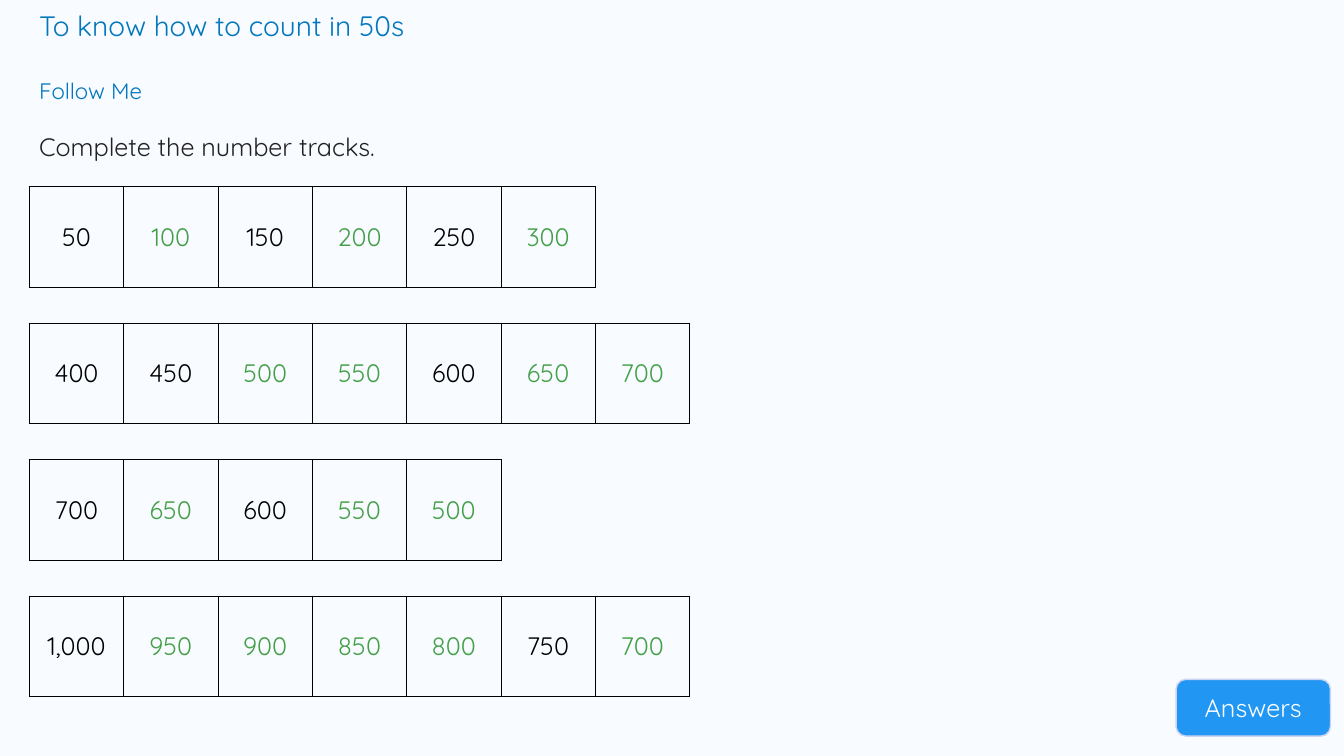
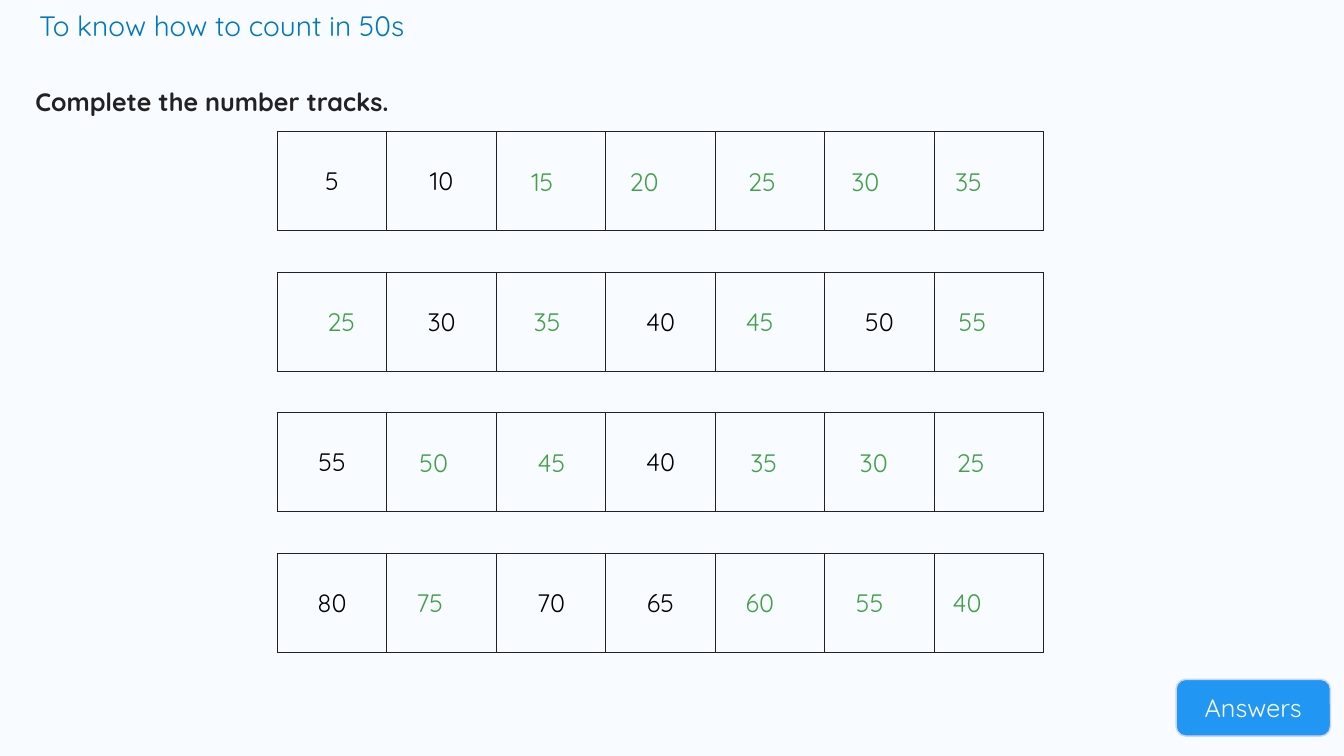
from lxml.etree import SubElement
from pptx import Presentation
from pptx.dml.color import RGBColor
from pptx.enum.shapes import MSO_SHAPE
from pptx.enum.text import MSO_ANCHOR, PP_ALIGN
from pptx.oxml import parse_xml
from pptx.oxml.ns import nsdecls, qn
from pptx.util import Cm, Pt

COLOURS = {
    "background": "F8FBFF",
    "heading": "0277BD",
    "body": "222222",
    "number": "000000",
    "answer": "43A047",
    "button": "2196F3",
    "button_edge": "CCD4F4",
    "button_text": "FFFFFF",
}
INSET = 0.25


class Worksheet:
    """Holds the worksheet style and adds elements to the current page."""

    font_name = "Quicksand"

    def __init__(self):
        self.deck = Presentation()
        self.deck.slide_width, self.deck.slide_height = Cm(33.87), Cm(19.05)
        fill = self.deck.slide_master.background.fill
        fill.solid()
        fill.fore_color.rgb = self.colour("background")
        self.page = None

    def colour(self, name):
        return RGBColor.from_string(COLOURS[name])

    def style(self, para, colour, size=18, bold=False):
        para.font.name = self.font_name
        para.font.size = Pt(size)
        para.font.bold = bold
        para.font.color.rgb = self.colour(colour)

    def start_page(self, title):
        self.page = self.deck.slides.add_slide(self.deck.slide_layouts[6])
        self.text(title, 0.74, 0.1, 31.34, 1.12, "heading", 20)

    def text_box(self, left, top, width, height):
        box = self.page.shapes.add_textbox(Cm(left), Cm(top), Cm(width), Cm(height))
        box.text_frame.word_wrap = True
        return box.text_frame

    def text(self, words, left, top, width, height, colour, size=18, bold=False, spacing=None):
        para = self.text_box(left, top, width, height).paragraphs[0]
        para.text = words
        para.line_spacing = spacing
        self.style(para, colour, size, bold)

    def button(self, label):
        button = self.page.shapes.add_shape(
            MSO_SHAPE.ROUNDED_RECTANGLE, Cm(29.64), Cm(17.12), Cm(3.89), Cm(1.43))
        button.adjustments[0] = 0.17
        button.shadow.inherit = False
        button.fill.solid()
        button.fill.fore_color.rgb = self.colour("button")
        button.line.color.rgb = self.colour("button_edge")
        button.line.width = Pt(1)
        button.text_frame.vertical_anchor = MSO_ANCHOR.MIDDLE
        para = button.text_frame.paragraphs[0]
        para.text = label
        para.alignment = PP_ALIGN.CENTER
        self.style(para, "button_text")

    def border(self, cell, edge):
        line = f'<a:solidFill><a:srgbClr val="{COLOURS[edge]}"/></a:solidFill>' if edge else "<a:noFill/>"
        properties = cell._tc.get_or_add_tcPr()
        for position, side in enumerate(("lnL", "lnR", "lnT", "lnB")):
            properties.insert(position, parse_xml(
                f'<a:{side} {nsdecls("a")} w="{Pt(0.75)}">{line}</a:{side}>'))

    def track(self, numbers, left, top, cell_width, height, edge=None, colour="number"):
        table = self.page.shapes.add_table(
            1, len(numbers), Cm(left), Cm(top),
            Cm(cell_width * len(numbers)), Cm(height)).table
        table.first_row = table.horz_banding = False
        for column, number in enumerate(numbers):
            table.columns[column].width = Cm(cell_width)
            cell = table.cell(0, column)
            cell.fill.background()
            self.border(cell, edge)
            cell.vertical_anchor = MSO_ANCHOR.MIDDLE
            cell.margin_left = cell.margin_right = Cm(INSET)
            cell.margin_top = cell.margin_bottom = Cm(INSET)
            para = cell.text_frame.paragraphs[0]
            para.text = f"{number:,}" if number else ""
            para.alignment = PP_ALIGN.CENTER
            self.style(para, colour)

    def answer_line(self, centres, left, top, width):
        frame = self.text_box(left, top, width, 1.27)
        frame.margin_left = frame.margin_right = Cm(INSET)
        frame.margin_top = frame.margin_bottom = Cm(INSET)
        para = frame.paragraphs[0]
        para.text = "".join(f"\t{number}" for number, _ in centres)
        stops = SubElement(para._p.get_or_add_pPr(), qn("a:tabLst"))
        for _, centre in centres:
            SubElement(stops, qn("a:tab"), pos=str(Cm(centre - left - INSET)), algn="ctr")
        self.style(para, "answer")


def follow_me(sheet, title, instruction):
    sheet.start_page(title)
    sheet.text("Follow Me", 0.74, 1.82, 7.54, 1.17, "heading", 16)
    sheet.text(instruction, 0.74, 2.81, 32.61, 1.42, "body", spacing=1.5)
    sheet.button("Answers")
    tracks = [
        (range(50, 301, 50), {50, 150, 250}),
        (range(400, 701, 50), {400, 450, 600}),
        (range(700, 499, -50), {700, 600}),
        (range(1000, 699, -50), {1000, 750}),
    ]
    for edge, colour in (("number", "number"), (None, "answer")):
        for row, (numbers, given) in enumerate(tracks):
            shown = [number if (number in given) == (colour == "number") else None
                     for number in numbers]
            sheet.track(shown, 0.74, 4.7 + 3.44 * row, 16.64 / 7, 2.54, edge, colour)


def practice(sheet, title, instruction):
    sheet.start_page(title)
    sheet.button("Answers")
    sheet.text(instruction, 0.64, 1.67, 32.61, 1.68, "body", bold=True, spacing=1.5)
    tracks = [
        ([5, 10, None, None, None, None, None], 8.13, 17.55,
         [(15, 13.67), (20, 16.23), (25, 19.2), (30, 21.81), (35, 24.41)]),
        ([None, 30, None, 40, None, 50, None], 7.65, 17.86,
         [(25, 8.6), (35, 13.79), (45, 19.15), (55, 24.51)]),
        ([55, None, None, 40, None, None, None], 7.72, 17.86,
         [(50, 10.93), (45, 13.9), (35, 19.25), (30, 22.02), (25, 24.46)]),
        ([80, None, 70, 65, None, None, None], 7.65, 17.86,
         [(75, 10.83), (60, 19.15), (55, 21.92), (40, 24.37)]),
    ]
    pitch = 3.54
    for row, (numbers, *_) in enumerate(tracks):
        sheet.track(numbers, 6.99, 3.32 + pitch * row, 2.76, 2.49, "body")
    for row, (_, left, width, centres) in enumerate(tracks):
        sheet.answer_line(centres, left, 3.94 + pitch * row, width)


def main():
    sheet = Worksheet()
    title = "To know how to count in 50s"
    instruction = "Complete the number tracks."
    follow_me(sheet, title, instruction)
    practice(sheet, title, instruction)
    sheet.deck.save("out.pptx")


if __name__ == "__main__":
    main()
